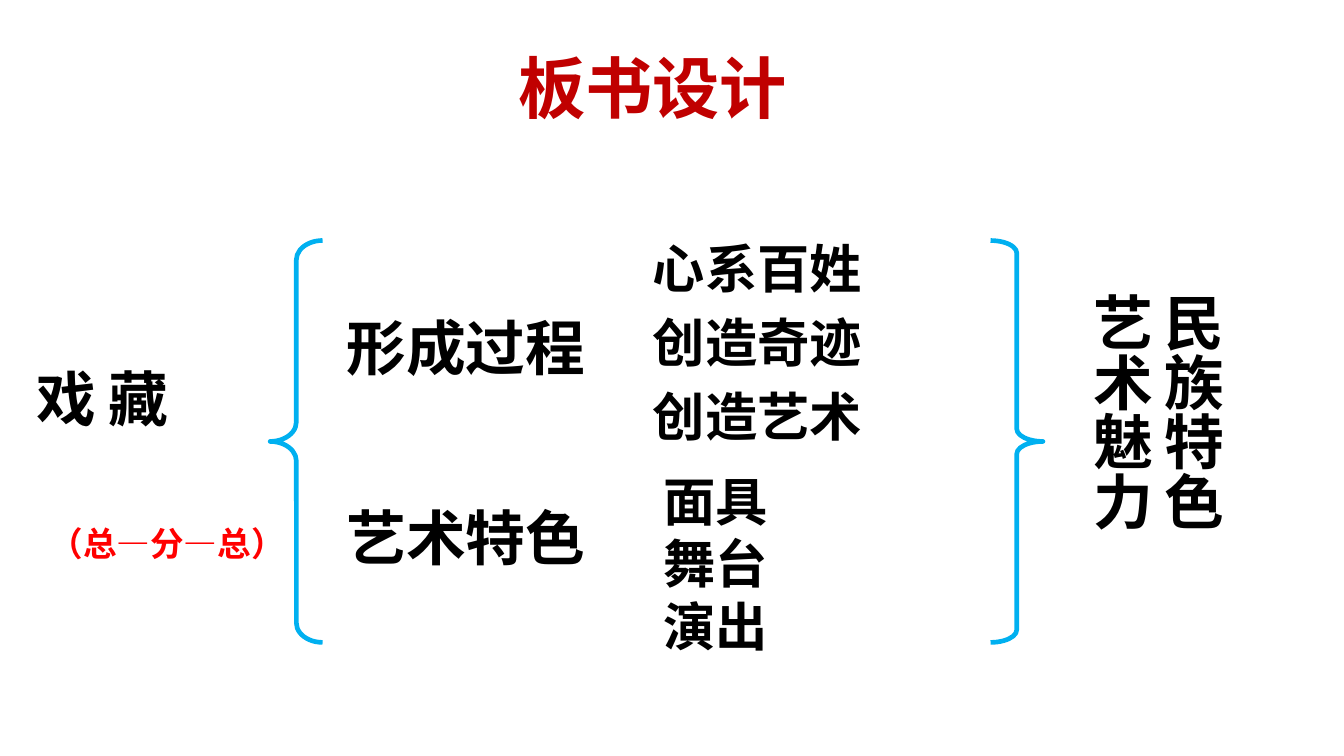
import pptx
import pptx.util
import pptx.dml.color
import pptx.enum.shapes
import pptx.enum.text
import pptx.oxml.ns
from lxml import etree

RGBColor = pptx.dml.color.RGBColor
BLACK = RGBColor(0x00, 0x00, 0x00)
WHITE = RGBColor(0xFF, 0xFF, 0xFF)
CRIMSON = RGBColor(0xC0, 0x00, 0x00)
RED = RGBColor(0xFF, 0x00, 0x00)
BLUE = RGBColor(0x00, 0xB0, 0xF0)
NOTO = "Noto Sans CJK SC"
SHAPE = pptx.enum.shapes.MSO_SHAPE
CENTER = pptx.enum.text.PP_ALIGN.CENTER
qn = pptx.oxml.ns.qn

deck = pptx.Presentation()
deck.slide_width = pptx.util.Inches(10)
deck.slide_height = deck.slide_width * 9 // 16
slide = deck.slides.add_slide(deck.slide_layouts[6])
col = deck.slide_width / 100
row = deck.slide_height / 100


def place(x, y, w, h):
    return round(x * col), round(y * row), round(w * col), round(h * row)


def write(box, lines, size, color=BLACK, face=NOTO, align=None, upright=False):
    frame = box.text_frame
    frame.word_wrap = True
    frame.auto_size = pptx.enum.text.MSO_AUTO_SIZE.SHAPE_TO_FIT_TEXT
    if upright:
        frame._txBody.bodyPr.set("vert", "eaVert")
    frame.text = "\n".join(lines)
    for para in frame.paragraphs:
        para.alignment = align
        font = para.font
        font.size = pptx.util.Pt(size)
        font.bold = True
        font.color.rgb = color
        font.name = face
        props = para._p.pPr.find(qn("a:defRPr"))
        etree.SubElement(props, qn("a:ea")).set("typeface", NOTO)


for kind, x, curve in [(SHAPE.LEFT_BRACE, 20.1, 0.37), (SHAPE.RIGHT_BRACE, 73.7, 0.24)]:
    brace = slide.shapes.add_shape(kind, *place(x, 31.82, 3.9, 53.16))
    brace.adjustments[0] = curve
    brace.adjustments[1] = 0.5
    brace.shadow.inherit = False
    brace.fill.background()
    brace.line.color.rgb = BLUE
    brace.line.width = pptx.util.Pt(2.5)

title = slide.shapes.add_shape(SHAPE.RECTANGLE, *place(37.4, 5.16, 22.3, 12.62))
title.shadow.inherit = False
title.fill.solid()
title.fill.fore_color.rgb = WHITE
title.line.fill.background()
write(title, ["板书设计"], 36, CRIMSON, align=CENTER)

for label, y, w in [("形成过程", 40.18, 31), ("艺术特色", 65.42, 31.7)]:
    write(slide.shapes.add_textbox(*place(24.8, y, w, 11.38)), [label], 32)

points = [("心系百姓", 21.3, NOTO), ("创造奇迹", 22.8, NOTO), ("创造艺术", 21.3, "Calibri")]
for step, (label, w, face) in enumerate(points):
    box = slide.shapes.add_textbox(*place(47.6, 30.4 + 9.78 * step, w, 10.13))
    write(box, [label], 28, face=face)

traits = slide.shapes.add_textbox(*place(48.4, 61.16, 32.8, 26.84))
write(traits, ["面具", "舞台", "演出"], 28, face="Arial")

topic = slide.shapes.add_textbox(*place(5.9, 47.11, 7.4, 18.67))
write(topic, ["藏戏"], 32, upright=True)

theme = slide.shapes.add_textbox(*place(79.1, 36.98, 12.8, 42.84))
write(theme, ["民族特色", "艺术魅力"], 32, align=CENTER, upright=True)

scheme = slide.shapes.add_textbox(*place(2.7, 68.27, 19.7, 7.11))
write(scheme, ["（总—分—总）"], 18, RED, "Calibri")

deck.save("out.pptx")
